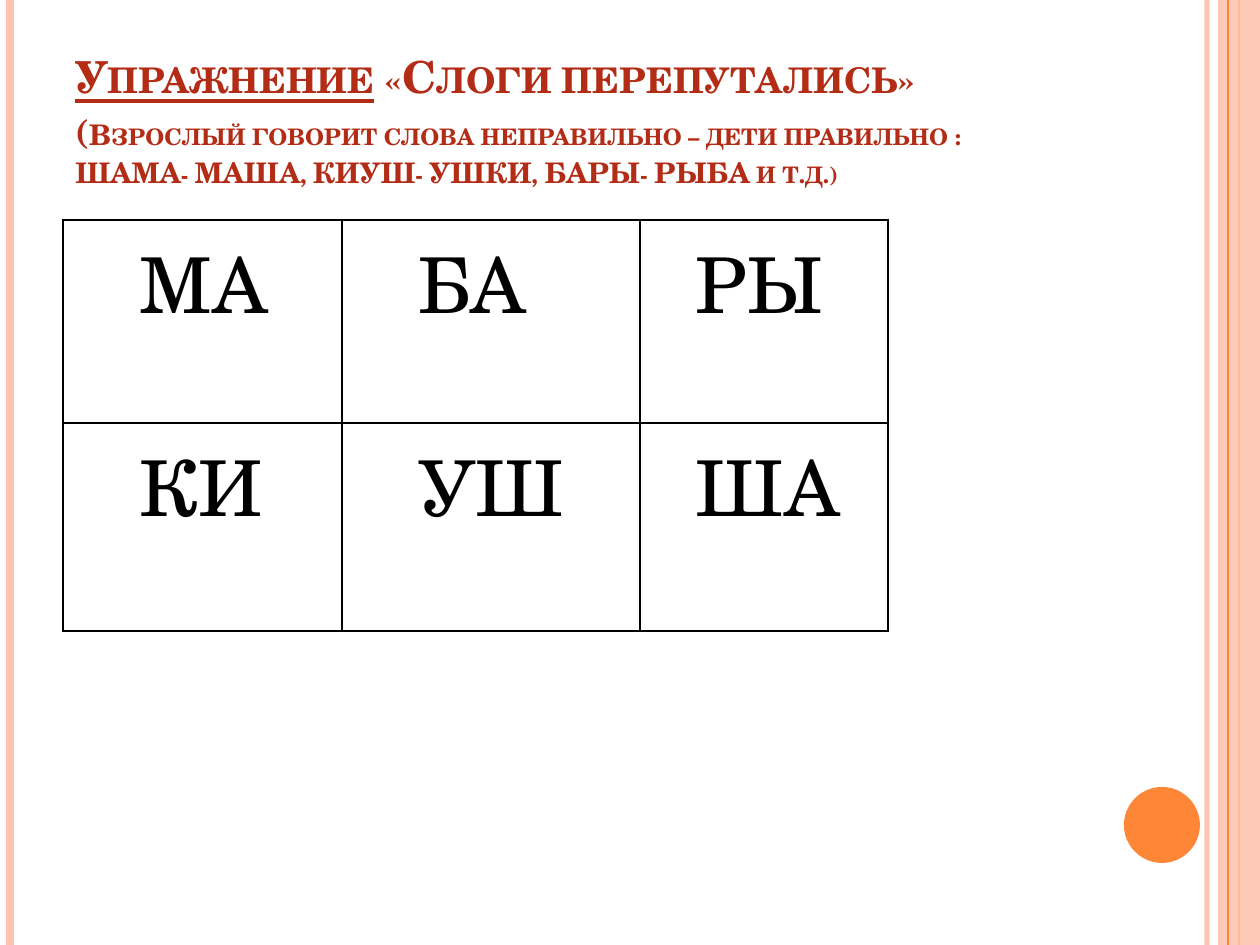
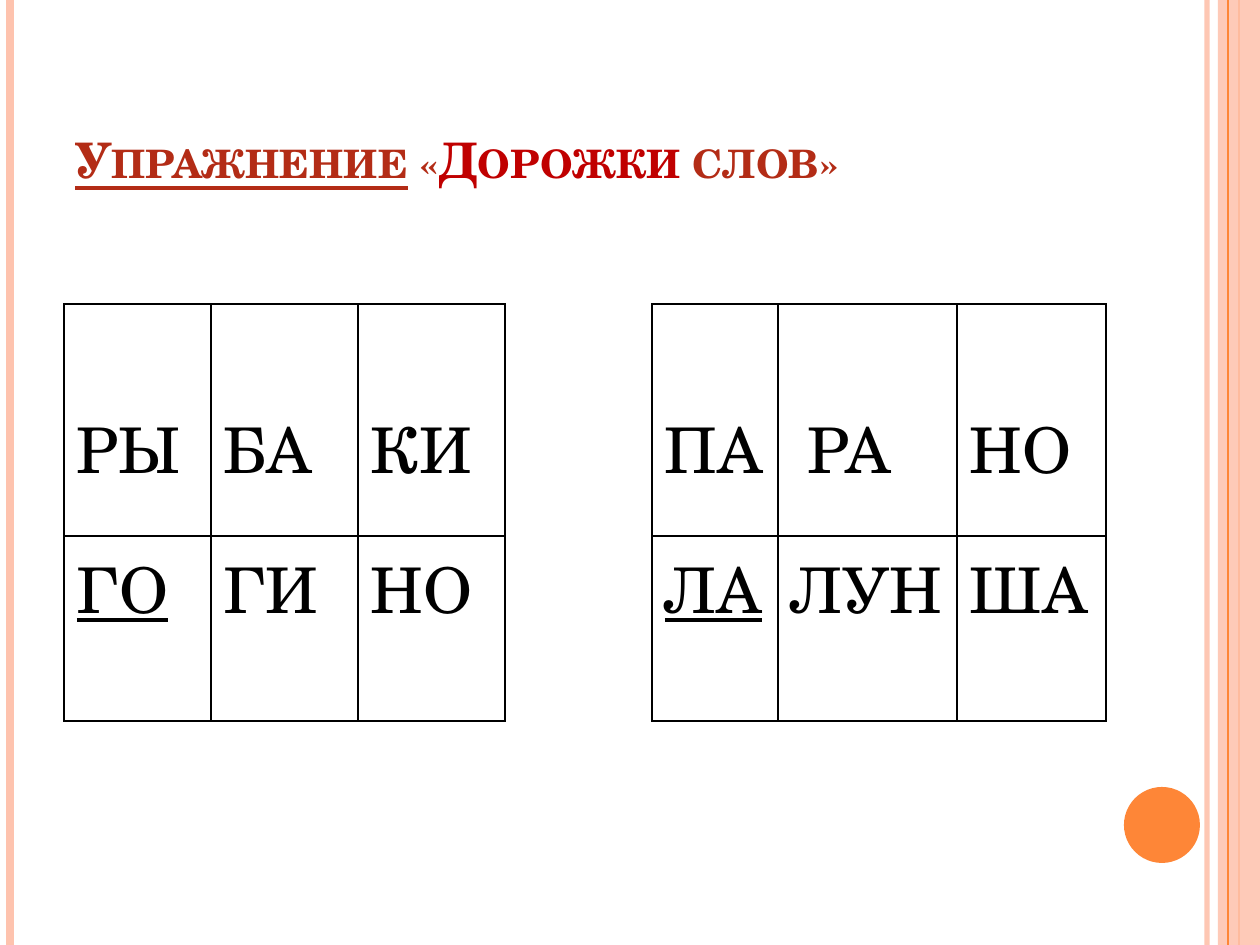
from lxml import etree
from pptx import Presentation
from pptx.dml.color import RGBColor
from pptx.enum.shapes import MSO_CONNECTOR, MSO_SHAPE
from pptx.enum.text import MSO_ANCHOR
from pptx.oxml.ns import qn
from pptx.util import Emu, Pt

STRAIGHT = MSO_CONNECTOR.STRAIGHT
RECTANGLE = MSO_SHAPE.RECTANGLE
OVAL = MSO_SHAPE.OVAL
BOTTOM = MSO_ANCHOR.BOTTOM

EMU_PER_PX = 914400 / 126
SLIDE_W, SLIDE_H = 1260, 945
FONT = "TeX Gyre Schola"
COLORS = {
    "peach": "FEC3AE",
    "orange": "FE8637",
    "brick": "B32C16",
    "red": "C00000",
    "ink": "000000",
}
SIDES = "LRTB"
CELL_INSET = 13
BLANK_LINE = 92


def px(length):
    return Emu(round(length * EMU_PER_PX))


def rgb(name):
    return RGBColor.from_string(COLORS[name])


def set_opacity(drawn, percent):
    if percent < 100:
        for color in drawn._element.iter(qn("a:srgbClr")):
            etree.SubElement(color, qn("a:alpha"), val=str(percent * 1000))


def add_text(paragraph, text, size, color="ink", bold=False, underline=False, small_caps=False):
    for index, line in enumerate(text.split("\n")):
        if index:
            paragraph.add_line_break()
        run = paragraph.add_run()
        run.text = line
        run.font.name = FONT
        run.font.size = Pt(size)
        run.font.bold = bold
        run.font.underline = underline
        run.font.color.rgb = rgb(color)
        if small_caps:
            run._r.get_or_add_rPr().set("cap", "small")


def add_stripe(slide, x, color, width, opacity=100):
    stripe = slide.shapes.add_connector(STRAIGHT, px(x), 0, px(x), px(SLIDE_H))
    stripe.line.color.rgb = rgb(color)
    stripe.line.width = Pt(width)
    etree.SubElement(stripe._element.spPr, qn("a:effectLst"))
    set_opacity(stripe, opacity)


def add_solid(slide, preset, box, color, opacity=100):
    solid = slide.shapes.add_shape(preset, *map(px, box))
    solid.shadow.inherit = False
    solid.fill.solid()
    solid.fill.fore_color.rgb = rgb(color)
    solid.line.fill.background()
    set_opacity(solid, opacity)


def add_frame(slide):
    add_stripe(slide, 1207, "peach", 3, opacity=93)
    add_stripe(slide, 10, "peach", 4.5)
    add_stripe(slide, 1239, "orange", 1.5)
    add_solid(slide, RECTANGLE, (1218, 0, 42, SLIDE_H), "peach", opacity=87)
    add_stripe(slide, 1228, "orange", 0.75)
    add_solid(slide, OVAL, (1124, 787, 76, 76), "orange")


def add_title(slide, parts):
    frame = slide.shapes.add_textbox(px(63), px(38), px(1029), px(157)).text_frame
    frame.word_wrap = True
    frame.vertical_anchor = BOTTOM
    for text, style in parts:
        add_text(frame.paragraphs[0], text, **{"color": "brick", "bold": True, "small_caps": True, **style})


def set_borders(cell, drawn_sides):
    properties = cell._tc.get_or_add_tcPr()
    for side in SIDES:
        border = etree.SubElement(properties, qn(f"a:ln{side}"), w=str(Pt(1)))
        if side in drawn_sides:
            fill = etree.SubElement(border, qn("a:solidFill"))
            etree.SubElement(fill, qn("a:srgbClr"), val=COLORS["ink"])
        else:
            etree.SubElement(border, qn("a:noFill"))


def add_syllable_table(slide, left, top, widths, heights, syllables, size,
                       empty_sides, indents=None, top_gaps=None, underlined=()):
    indents = indents or {}
    top_gaps = top_gaps or {}
    table = slide.shapes.add_table(
        len(heights), len(widths), px(left), px(top), px(sum(widths)), px(sum(heights))
    ).table
    table.first_row = False
    table.horz_banding = False
    for column, width in zip(table.columns, widths):
        column.width = px(width)
    for row, height in zip(table.rows, heights):
        row.height = px(height)
    for row_index, row_syllables in enumerate(syllables):
        for column_index, syllable in enumerate(row_syllables):
            cell = table.cell(row_index, column_index)
            set_borders(cell, SIDES if syllable else empty_sides)
            cell.fill.background()
            if syllable:
                indent = indents.get((row_index, column_index), 0)
                cell.margin_left = px(CELL_INSET + indent)
                cell.margin_top = px(6 + top_gaps.get(row_index, 0))
                add_text(cell.text_frame.paragraphs[0], syllable, size, underline=syllable in underlined)


def add_mixed_syllables(slide):
    add_title(slide, [
        ("Упражнение", {"size": 25.2, "underline": True}),
        (" «Слоги перепутались»\n(", {"size": 25.2}),
        ("Взрослый говорит слова неправильно – дети правильно :\n"
         "ШАМА- МАША, КИУШ- УШКИ, БАРЫ- РЫБА и т.д.)", {"size": 16.2}),
    ])
    column_indents = (64, 64, 43)
    add_syllable_table(
        slide, 63, 220, (279, 298, 248), (203, 208, 218),
        (("МА", "БА", "РЫ"), ("КИ", "УШ", "ША"), ("", "", "")),
        size=44, empty_sides="T",
        indents={(row, column): indent for row in range(2) for column, indent in enumerate(column_indents)},
    )


def add_word_paths(slide):
    add_title(slide, [
        ("Упражнение", {"size": 28, "underline": True}),
        (" «", {"size": 28}),
        ("Дорожки", {"size": 28, "color": "red"}),
        (" слов»", {"size": 28}),
    ])
    add_syllable_table(
        slide, 64, 304, (147, 147, 147, 147, 126, 179, 149), (232, 185),
        (("РЫ", "БА", "КИ", "", "ПА", "РА", "НО"),
         ("ГО", "ГИ", "НО", "", "ЛА", "ЛУН", "ША")),
        size=36, empty_sides="LR", indents={(0, 5): 17},
        top_gaps={0: BLANK_LINE}, underlined=("ГО", "ЛА"),
    )


def main():
    presentation = Presentation()
    presentation.slide_width = px(SLIDE_W)
    presentation.slide_height = px(SLIDE_H)
    blank = presentation.slide_layouts[6]
    for add_content in (add_mixed_syllables, add_word_paths):
        slide = presentation.slides.add_slide(blank)
        add_frame(slide)
        add_content(slide)
    presentation.save("out.pptx")


if __name__ == "__main__":
    main()
